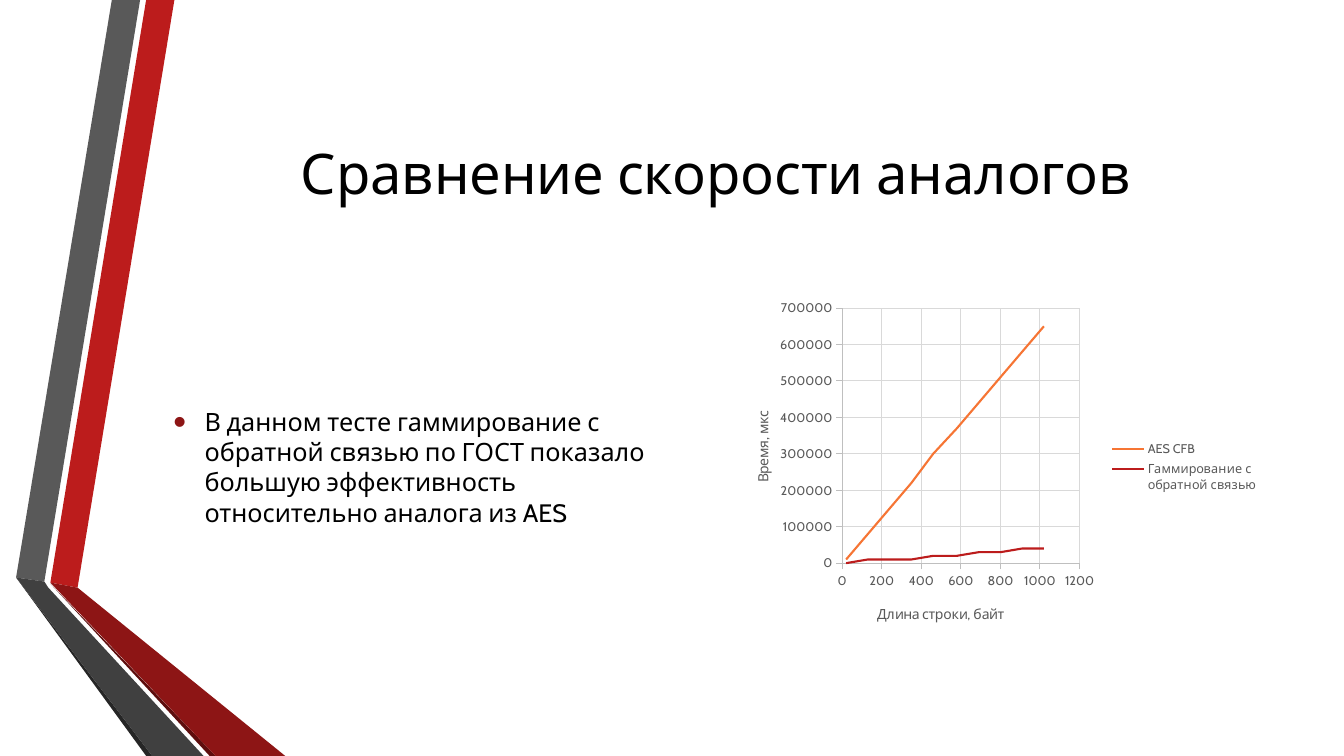
from lxml import etree
from pptx import Presentation
from pptx.chart.data import XyChartData
from pptx.dml.color import RGBColor
from pptx.enum.chart import XL_CHART_TYPE as ChartType, XL_LEGEND_POSITION as LegendPosition
from pptx.enum.chart import XL_TICK_MARK as TickMark
from pptx.enum.text import MSO_ANCHOR as Anchor, PP_ALIGN as Align
from pptx.oxml.ns import qn
from pptx.util import Inches, Pt

BLACK = RGBColor(0x00, 0x00, 0x00)
WHITE = RGBColor(0xFF, 0xFF, 0xFF)
RED = RGBColor(0xBC, 0x1C, 0x1C)
DARK_RED = RGBColor(0x8D, 0x15, 0x15)
DEEP_RED = RGBColor(0x5E, 0x0E, 0x0E)
ORANGE = RGBColor(0xF6, 0x75, 0x34)
GRAY = RGBColor(0x59, 0x59, 0x59)
DARK_GRAY = RGBColor(0x40, 0x40, 0x40)
DEEP_GRAY = RGBColor(0x26, 0x26, 0x26)
AXIS_GRAY = RGBColor(0xBF, 0xBF, 0xBF)
GRID_GRAY = RGBColor(0xD9, 0xD9, 0xD9)
FONT = "Cabin"

# Content
TITLE = "Сравнение скорости аналогов"
BODY = ("В данном тесте гаммирование с обратной связью по ГОСТ показало "
        "большую эффективность относительно аналога из AES")
LENGTHS = [20, 130, 240, 350, 460, 580, 690, 800, 910, 1020]
SERIES = [
    ("AES CFB", ORANGE,
     [10000, 80000, 150000, 220000, 300000, 370000, 440000, 510000, 580000, 650000]),
    ("Гаммирование с обратной связью", RED,
     [0, 10000, 10000, 10000, 20000, 20000, 30000, 30000, 40000, 40000]),
]
# Axis title, maximum, step, title position as shares of the chart
X_AXIS = ("Длина строки, байт", 1200, 200, (0.27, 0.89))
Y_AXIS = ("Время, мкс", 700000, 100000, (0.04, 0.33))
PLOT_AREA = (0.21, 0.04, 0.44, 0.74)

# Slide grid, in inches
WIDTH, HEIGHT = 13.33, 7.5
LEFT, CONTENT_WIDTH = 1.62, 10.96
TITLE_TOP, TITLE_HEIGHT = 0.75, 1.92
COLUMN_TOP, COLUMN_WIDTH, COLUMN_HEIGHT = 2.92, 5.35, 3.42
RIGHT_COLUMN = LEFT + CONTENT_WIDTH - COLUMN_WIDTH

# Folded ribbons on the left edge
RIBBONS = [
    (RED, [(0.5, 5.78), (0.77, 5.83), (1.73, 0), (1.45, 0)]),
    (GRAY, [(1.39, 0), (1.11, 0), (0.16, 5.73), (0.44, 5.77)]),
    (DEEP_GRAY, [(0.16, 5.73), (1.45, HEIGHT), (1.51, HEIGHT)]),
    (DEEP_RED, [(0.5, 5.79), (2.08, HEIGHT), (2.14, HEIGHT)]),
    (DARK_RED, [(0.5, 5.78), (2.14, HEIGHT), (2.83, HEIGHT), (0.77, 5.83)]),
    (DARK_GRAY, [(2.02, HEIGHT), (0.48, 5.83), (0.44, 5.77), (0.16, 5.73), (1.51, HEIGHT)]),
]


def style_font(font, size, color):
    font.name, font.size, font.bold = FONT, Pt(size), False
    font.color.rgb = color


def style_line(line, color, width):
    line.color.rgb = color
    line.width = Pt(width)


def add_ribbon(slide, color, points):
    builder = slide.shapes.build_freeform(
        Inches(points[0][0]), Inches(points[0][1]))
    builder.add_line_segments([(Inches(x), Inches(y)) for x, y in points[1:]])
    shape = builder.convert_to_shape()
    shape.shadow.inherit = False
    shape.fill.solid()
    shape.fill.fore_color.rgb = color
    shape.line.fill.background()


def add_text(slide, text, size, left, top, width, height):
    box = slide.shapes.add_textbox(*map(Inches, (left, top, width, height)))
    frame = box.text_frame
    frame.word_wrap = True
    frame.vertical_anchor = Anchor.MIDDLE
    frame.text = text
    para = frame.paragraphs[0]
    style_font(para.runs[0].font, size, BLACK)
    return para


def add_bullet(para, color):
    props = para._p.get_or_add_pPr()
    props.set("marL", str(Inches(0.31)))
    props.set("indent", str(-Inches(0.31)))
    holder = etree.SubElement(props, qn("a:buClr"))
    etree.SubElement(holder, qn("a:srgbClr"), val=str(color))
    etree.SubElement(props, qn("a:buSzPct"), val="145000")
    etree.SubElement(props, qn("a:buFont"), typeface="Arial")
    etree.SubElement(props, qn("a:buChar"), char="•")


def place(element, index, shares, inner=False):
    """Fix a chart part at shares of the chart's size."""
    for old in element.findall(qn("c:layout")):
        element.remove(old)
    layout = etree.Element(qn("c:layout"))
    element.insert(index, layout)
    manual = etree.SubElement(layout, qn("c:manualLayout"))
    if inner:
        etree.SubElement(manual, qn("c:layoutTarget"), val="inner")
    for name in ("xMode", "yMode"):
        etree.SubElement(manual, qn("c:" + name), val="edge")
    for name, share in zip("xywh", shares):
        etree.SubElement(manual, qn("c:" + name), val=str(share))


def style_axis(axis, title, maximum, step, position):
    axis.minimum_scale, axis.maximum_scale, axis.major_unit = 0, maximum, step
    axis.major_tick_mark, axis.minor_tick_mark = TickMark.OUTSIDE, TickMark.NONE
    axis.has_major_gridlines = True
    style_line(axis.major_gridlines.format.line, GRID_GRAY, 0.75)
    style_line(axis.format.line, AXIS_GRAY, 0.75)
    style_font(axis.tick_labels.font, 9, GRAY)
    axis.tick_labels.number_format = "General"
    axis.tick_labels.number_format_is_linked = False
    axis.axis_title.text_frame.text = title
    style_font(axis.axis_title.text_frame.paragraphs[0].runs[0].font, 10, GRAY)
    place(axis.axis_title._element, 1, position)


def add_speed_chart(slide):
    data = XyChartData()
    for name, _, times in SERIES:
        series = data.add_series(name)
        for length, time in zip(LENGTHS, times):
            series.add_data_point(length, time)
    frame = slide.shapes.add_chart(
        ChartType.XY_SCATTER_SMOOTH_NO_MARKERS,
        *map(Inches, (RIGHT_COLUMN, COLUMN_TOP, COLUMN_WIDTH, COLUMN_HEIGHT)), data)
    chart = frame.chart
    style_font(chart.font, 10, BLACK)
    chart.has_title = False
    chart.has_legend = True
    chart.legend.position = LegendPosition.RIGHT
    chart.legend.include_in_layout = False
    style_font(chart.legend.font, 9, GRAY)
    plot = chart.plots[0]
    plot.vary_by_categories = False
    for series, (_, color, _) in zip(plot.series, SERIES):
        style_line(series.format.line, color, 1.5)
    style_axis(chart.category_axis, *X_AXIS)
    style_axis(chart.value_axis, *Y_AXIS)
    place(chart._chartSpace.chart.plotArea, 0, PLOT_AREA, inner=True)


def main():
    deck = Presentation()
    deck.slide_width, deck.slide_height = Inches(WIDTH), Inches(HEIGHT)
    slide = deck.slides.add_slide(deck.slide_layouts[6])
    slide.background.fill.solid()
    slide.background.fill.fore_color.rgb = WHITE

    for color, points in RIBBONS:
        add_ribbon(slide, color, points)

    # Title and conclusion
    title = add_text(slide, TITLE, 40, LEFT, TITLE_TOP, CONTENT_WIDTH, TITLE_HEIGHT)
    title.alignment = Align.CENTER
    body = add_text(slide, BODY, 18, LEFT, COLUMN_TOP, COLUMN_WIDTH, COLUMN_HEIGHT)
    body.space_before, body.space_after = Pt(3.6), Pt(6)
    add_bullet(body, DARK_RED)

    add_speed_chart(slide)
    deck.save("out.pptx")


if __name__ == "__main__":
    main()
